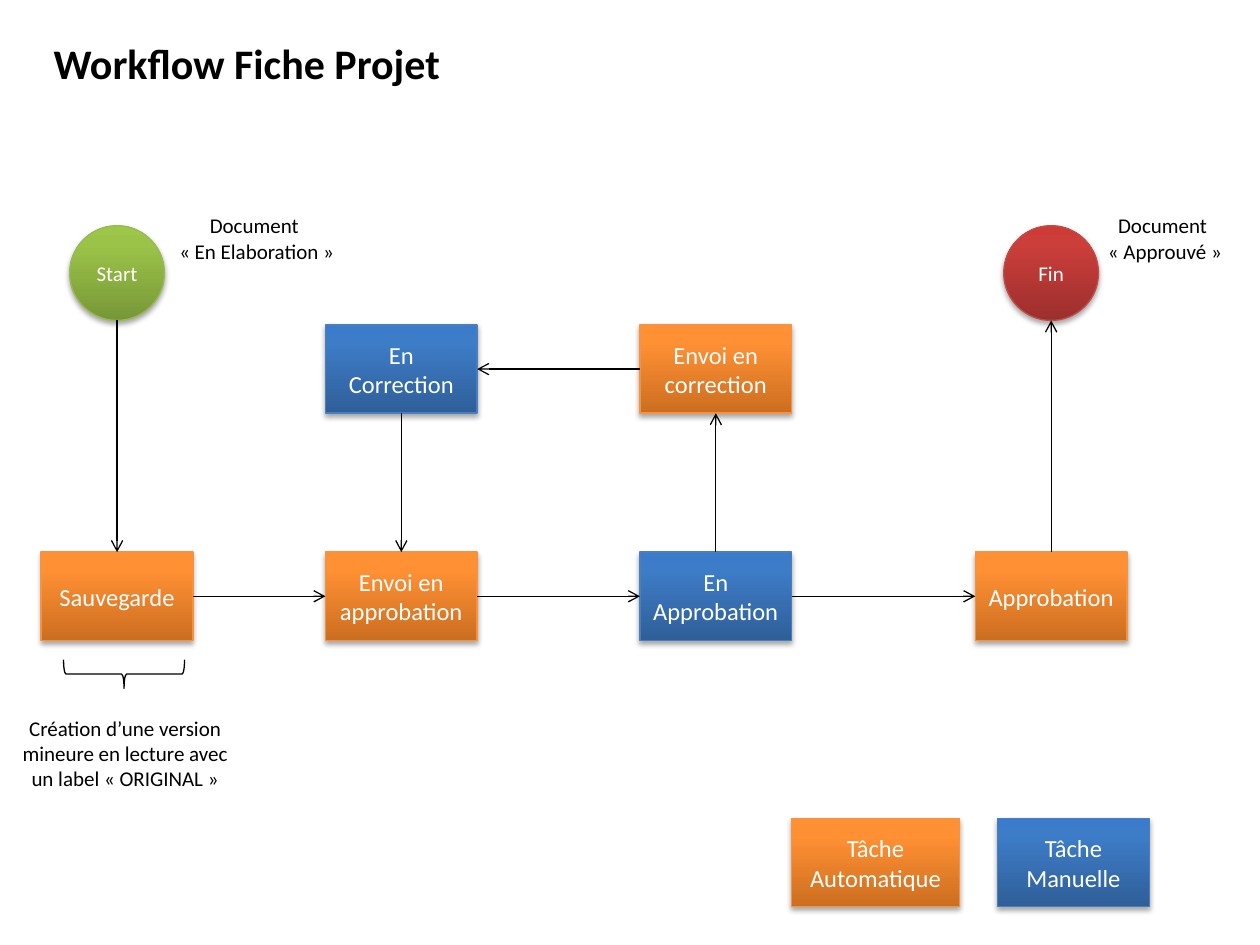
from copy import deepcopy
from dataclasses import dataclass

from lxml.etree import SubElement
from pptx import Presentation
from pptx.dml.color import RGBColor
from pptx.enum.shapes import MSO_CONNECTOR, MSO_SHAPE
from pptx.enum.text import MSO_ANCHOR, MSO_AUTO_SIZE, PP_ALIGN
from pptx.oxml.ns import qn
from pptx.util import Cm, Pt


@dataclass(frozen=True)
class Theme:
    font: str = "Calibri"
    ink: str = "000000"
    paper: str = "FFFFFF"
    auto: tuple = ("CC6E20", "FF9034", "FF9136", "F69240")
    manual: tuple = ("2F5F99", "3D7CC7", "3A7CCB", "4B7EBC")
    start: tuple = ("779737", "9BC348", "9DC746", "98B955")
    end: tuple = ("9C2F2D", "CB3E3A", "CE3B37", "BF4C48")
    title: int = 24
    task: int = 14
    note: int = 12
    line: float = 0.75


THEME = Theme()
TOP, LEFT, BOTTOM, RIGHT = range(4)
WIDE, HIGH, ROUND = 3.06, 1.78, 1.91
COLS = (0.83, 6.56, 12.9, 19.66)
UPPER, LOWER, LEGEND = 6.55, 11.13, 16.5


def write(shape, text, size, color, align=PP_ALIGN.CENTER, bold=False):
    frame = shape.text_frame
    frame.word_wrap = True
    frame.text = text
    for para in frame.paragraphs:
        para.alignment = align
        para.font.name = THEME.font
        para.font.size = Pt(size)
        para.font.bold = bold
        para.font.color.rgb = RGBColor.from_string(color)


def stroke(shape, color):
    shape.line.color.rgb = RGBColor.from_string(color)
    shape.line.width = Pt(THEME.line)


def shade(shape, colors):
    fill = shape.fill
    fill.gradient()
    fill.gradient_angle = 90
    stops = shape._element.spPr.find(qn("a:gradFill")).find(qn("a:gsLst"))
    stops.append(deepcopy(stops[0]))
    for stop, place, color in zip(fill.gradient_stops, (0, 0.8, 1), colors):
        stop.position = place
        stop.color.rgb = RGBColor.from_string(color)


def drop(shape):
    shape.shadow.inherit = False
    effects = shape._element.spPr.find(qn("a:effectLst"))
    outer = SubElement(effects, qn("a:outerShdw"), blurRad=str(Pt(3.1)),
                       dist=str(Pt(1.8)), dir="5400000", rotWithShape="0")
    color = SubElement(outer, qn("a:srgbClr"), val=THEME.ink)
    SubElement(color, qn("a:alpha"), val="35000")


def node(slide, kind, text, size, colors, left, top, width, height):
    shape = slide.shapes.add_shape(kind, Cm(left), Cm(top), Cm(width), Cm(height))
    shade(shape, colors)
    stroke(shape, colors[-1])
    drop(shape)
    shape.text_frame.vertical_anchor = MSO_ANCHOR.MIDDLE
    write(shape, text, size, THEME.paper)
    return shape


def task(slide, text, colors, left, top, width=WIDE):
    return node(slide, MSO_SHAPE.RECTANGLE, text, THEME.task, colors,
                left, top, width, HIGH)


def event(slide, text, colors, col):
    left = col + (WIDE - ROUND) / 2
    return node(slide, MSO_SHAPE.OVAL, text, THEME.note, colors,
                left, 4.55, ROUND, ROUND)


def spot(shape, side):
    across = {LEFT: 0, RIGHT: 1}.get(side, 0.5)
    down = {TOP: 0, BOTTOM: 1}.get(side, 0.5)
    return (int(shape.left + across * shape.width),
            int(shape.top + down * shape.height))


def arrow(slide, tail, out, head, into):
    link = slide.shapes.add_connector(
        MSO_CONNECTOR.STRAIGHT, *spot(tail, out), *spot(head, into))
    if tail.auto_shape_type == MSO_SHAPE.RECTANGLE:
        link.begin_connect(tail, out)
    if head.auto_shape_type == MSO_SHAPE.RECTANGLE:
        link.end_connect(head, into)
    stroke(link, THEME.ink)
    SubElement(link.line._get_or_add_ln(), qn("a:tailEnd"), type="arrow")
    SubElement(link._element.spPr, qn("a:effectLst"))


def brace(slide):
    shape = slide.shapes.add_shape(
        MSO_SHAPE.RIGHT_BRACE, Cm(2.21), Cm(12.37), Cm(0.58), Cm(2.44))
    shape.rotation = 90
    shape.fill.background()
    shape.shadow.inherit = False
    stroke(shape, THEME.ink)


def label(slide, text, left, top, width, height, size=THEME.note, **style):
    box = slide.shapes.add_textbox(Cm(left), Cm(top), Cm(width), Cm(height))
    write(box, text, size, THEME.ink, **style)
    box.text_frame.auto_size = MSO_AUTO_SIZE.SHAPE_TO_FIT_TEXT


def main():
    deck = Presentation()
    deck.slide_width, deck.slide_height = Cm(25.4), Cm(19.05)
    slide = deck.slides.add_slide(deck.slide_layouts[6])

    label(slide, "Workflow Fiche Projet", 0.83, 0.64, 22.66, 1.28, THEME.title,
          align=PP_ALIGN.LEFT, bold=True)
    start = event(slide, "Start", THEME.start, COLS[0])
    end = event(slide, "Fin", THEME.end, COLS[3])
    save = task(slide, "Sauvegarde", THEME.auto, COLS[0], LOWER)
    send = task(slide, "Envoi en approbation", THEME.auto, COLS[1], LOWER)
    review = task(slide, "En Approbation", THEME.manual, COLS[2], LOWER)
    approve = task(slide, "Approbation", THEME.auto, COLS[3], LOWER)
    edit = task(slide, "En Correction", THEME.manual, COLS[1], UPPER)
    reject = task(slide, "Envoi en correction", THEME.auto, COLS[2], UPPER)
    task(slide, "Tâche Automatique", THEME.auto, 15.96, LEGEND, 3.38)
    task(slide, "Tâche Manuelle", THEME.manual, 20.11, LEGEND)

    for link in (
        (start, BOTTOM, save, TOP),
        (save, RIGHT, send, LEFT),
        (send, RIGHT, review, LEFT),
        (review, TOP, reject, BOTTOM),
        (reject, LEFT, edit, RIGHT),
        (edit, BOTTOM, send, TOP),
        (review, RIGHT, approve, LEFT),
        (approve, TOP, end, BOTTOM),
    ):
        arrow(slide, *link)

    brace(slide)
    label(slide, "Création d’une version mineure en lecture avec un label « ORIGINAL »",
          0.2, 14.3, 4.65, 1.8)
    label(slide, "Document \n« En Elaboration »", 3.18, 4.17, 3.99, 1.28)
    label(slide, "Document \n« Approuvé »", 21.77, 4.17, 3.43, 1.28)
    deck.save("out.pptx")


if __name__ == "__main__":
    main()
